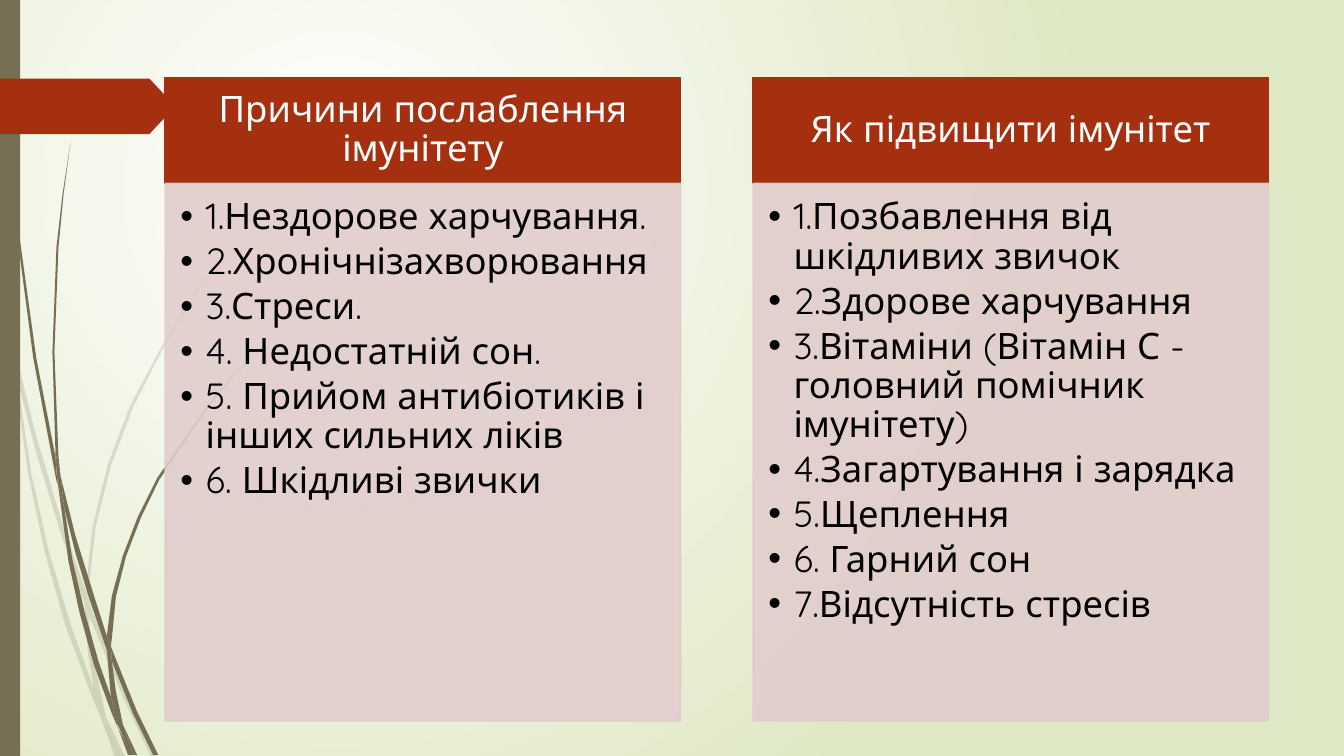
import pptx
import pptx.util
import pptx.dml.color
from pptx.enum.shapes import MSO_SHAPE
from pptx.enum.text import MSO_ANCHOR, PP_ALIGN
from pptx.oxml.ns import qn
from pptx.oxml.xmlchemy import OxmlElement
from pptx.util import Inches

COLORS = {
    "olive": "766F54", "rust": "A53010", "pink": "E1CDCC",
    "white": "FFFFFF", "black": "000000", "lime": "DFE8C4",
}
FONT = "Quicksand"
SIZE = 26
PANEL_W, HEAD_H, BODY_H = 5.11, 1.05, 5.33
PANEL_TOP = 0.77

# Outlines of the grass segments, as (x, y) in inches.
PALE_GRASS = [
    [(0.11, 3.5), (0.09, 3.22), (0, 2.82), (0, 2.99), (0.1, 3.44)],
    [(0.58, 5.22), (0.84, 5.99), (0.85, 5.86), (0.62, 5.2), (0.36, 4.33),
     (0.14, 3.45), (0.17, 3.76), (0.36, 4.5)],
    [(0.92, 6.07), (0.88, 5.96), (0.88, 6.1), (1.23, 6.94), (1.5, 7.51),
     (1.55, 7.51), (1.27, 6.92)],
    [(1.19, 7.51), (1.24, 7.51), (1.05, 7.11)],
    [(0.93, 6.83), (0.7, 6.19), (0.48, 5.45), (0.31, 4.69), (0.17, 3.76),
     (0.11, 3.5), (0.28, 4.7), (0.44, 5.46), (0.65, 6.21), (0.92, 6.93),
     (1.01, 7.14), (0.99, 7.07)],
    [(0.84, 5.99), (0.87, 6.46), (0.93, 6.83), (0.96, 6.92), (1.05, 7.11),
     (0.91, 6.46), (0.88, 6.1)],
    [(0.88, 5.84), (0.95, 5.22), (1.1, 4.62), (1.32, 4.04), (1.6, 3.49),
     (1.92, 2.95), (2.29, 2.45), (2.68, 1.98), (3.12, 1.54), (3.12, 1.53),
     (2.68, 1.97), (2.28, 2.44), (1.9, 2.94), (1.58, 3.48), (1.29, 4.03),
     (1.07, 4.61), (0.92, 5.22), (0.85, 5.84), (0.88, 5.96)],
    [(1.01, 7.14), (1.14, 7.51), (1.19, 7.51)],
    [(0.88, 6.08), (0.88, 5.96), (0.85, 5.86), (0.84, 5.99)],
    [(0.96, 6.92), (0.93, 6.83), (0.99, 7.07), (1.01, 7.14), (1.19, 7.51),
     (1.05, 7.11)],
]
DARK_GRASS = [
    [(0.07, 1.1), (0.17, 2.33), (0.33, 3.55), (0.56, 4.77), (0.57, 4.81),
     (0.55, 4.53), (0.36, 3.55), (0.19, 2.32), (0.08, 1.09), (0.05, 0.48),
     (0.04, 0), (0.03, 0), (0.04, 0.48)],
    [(0.88, 5.92), (1.06, 6.45), (1.06, 6.31), (0.93, 5.9), (0.75, 5.32),
     (0.6, 4.72), (0.64, 5.05), (0.75, 5.49)],
    [(1.13, 6.49), (1.1, 6.41), (1.11, 6.56), (1.32, 7.08), (1.52, 7.49),
     (1.57, 7.49), (1.36, 7.06)],
    [(1.1, 6.91), (0.98, 6.57), (0.84, 6.07), (0.72, 5.56), (0.64, 5.05),
     (0.57, 4.77), (0.68, 5.57), (0.79, 6.08), (0.93, 6.59), (1.11, 7.08),
     (1.17, 7.22), (1.16, 7.17)],
    [(0.6, 4.72), (0.58, 4.53), (0.54, 3.49), (0.58, 2.45), (0.63, 1.93),
     (0.7, 1.41), (0.62, 1.93), (0.56, 2.45), (0.52, 3.49), (0.55, 4.49)],
    [(1.33, 7.49), (1.36, 7.49), (1.22, 7.19)],
    [(0.57, 4.77), (0.64, 5.05), (0.6, 4.72), (0.55, 4.49), (0.55, 4.53)],
    [(1.11, 6.33), (1.15, 5.92), (1.25, 5.52), (1.4, 5.13), (1.58, 4.76),
     (2.05, 4.06), (2.31, 3.74), (2.61, 3.44), (2.6, 3.44), (2.31, 3.73),
     (2.04, 4.05), (1.56, 4.74), (1.37, 5.12), (1.22, 5.51), (1.11, 5.91),
     (1.06, 6.31), (1.1, 6.41)],
    [(1.17, 7.22), (1.27, 7.49), (1.31, 7.49)],
    [(1.06, 6.45), (1.1, 6.91), (1.16, 7.06), (1.22, 7.19), (1.15, 6.86),
     (1.11, 6.56)],
    [(1.06, 6.45), (1.11, 6.56), (1.1, 6.41), (1.06, 6.31)],
    [(1.16, 7.06), (1.1, 6.91), (1.16, 7.17), (1.3, 7.49), (1.33, 7.49),
     (1.22, 7.19)],
]

PANELS = [
    (1.64, "Причини послаблення імунітету", [
        "1.Нездорове харчування.",
        "2.Хронічнізахворювання",
        "3.Стреси.",
        "4. Недостатній сон.",
        "5. Прийом антибіотиків і інших сильних ліків",
        "6. Шкідливі звички",
    ]),
    (7.47, "Як підвищити імунітет", [
        "1.Позбавлення від шкідливих звичок",
        "2.Здорове харчування",
        "3.Вітаміни (Вітамін С - головний помічник імунітету)",
        "4.Загартування і зарядка",
        "5.Щеплення",
        "6. Гарний сон",
        "7.Відсутність стресів",
    ]),
]


def rgb(name):
    return pptx.dml.color.RGBColor.from_string(COLORS[name])


def paint(fill, color, opacity=100):
    fill.solid()
    fill.fore_color.rgb = rgb(color)
    if opacity < 100:
        alpha = OxmlElement("a:alpha")
        alpha.set("val", str(opacity * 1000))
        fill._xPr.find(".//" + qn("a:srgbClr")).append(alpha)


def set_background(s):
    """Radial gradient, white spreading out to lime."""
    fill = s.background.fill
    fill.gradient()
    for stop, color, position in zip(fill.gradient_stops, ("white", "lime"), (0, 1)):
        stop.color.rgb = rgb(color)
        stop.position = position
    lin = s.element.find(".//" + qn("a:lin"))
    radial = OxmlElement("a:path")
    radial.set("path", "circle")
    focus = OxmlElement("a:fillToRect")
    for side, value in zip("ltrb", (50000, 50000, 100000, 100000)):
        focus.set(side, str(value))
    radial.append(focus)
    lin.getparent().replace(lin, radial)


def add_grass(s, outline, opacity):
    points = [(Inches(x), Inches(y)) for x, y in outline]
    builder = s.shapes.build_freeform(*points[0])
    builder.add_line_segments(points[1:], close=True)
    sp = builder.convert_to_shape()
    sp.shadow.inherit = False
    sp.line.fill.background()
    paint(sp.fill, "olive", opacity)


def add_block(s, kind, x, y, w, h, color, opacity=100, outlined=False):
    sp = s.shapes.add_shape(kind, Inches(x), Inches(y), Inches(w), Inches(h))
    sp.shadow.inherit = False
    paint(sp.fill, color, opacity)
    if outlined:
        sp.line.width = pptx.util.Pt(1.25)
        paint(sp.line.fill, color, opacity)
    else:
        sp.line.fill.background()
    return sp


def set_margins(tf, *margins):
    (tf.margin_left, tf.margin_top,
     tf.margin_right, tf.margin_bottom) = map(Inches, margins)


def format_paragraph(p, color, align):
    p.alignment = align
    p.line_spacing = 0.9
    p.font.name = FONT
    p.font.size = pptx.util.Pt(SIZE)
    p.font.color.rgb = rgb(color)


def add_bullet(p):
    pPr = p._p.get_or_add_pPr()
    pPr.set("marL", str(Inches(0.25)))
    pPr.set("indent", str(-Inches(0.25)))
    for tag, key, value in (("a:buFont", "typeface", "Arial"), ("a:buChar", "char", "•")):
        element = OxmlElement(tag)
        element.set(key, value)
        pPr.find(qn("a:defRPr")).addprevious(element)


def add_panel(s, x, heading, items):
    head = add_block(s, MSO_SHAPE.RECTANGLE, x, PANEL_TOP, PANEL_W, HEAD_H,
                     "rust", outlined=True)
    tf = head.text_frame
    tf.vertical_anchor = MSO_ANCHOR.MIDDLE
    set_margins(tf, 0.2, 0.12, 0.2, 0.12)
    tf.text = heading
    format_paragraph(tf.paragraphs[0], "white", PP_ALIGN.CENTER)

    body = add_block(s, MSO_SHAPE.RECTANGLE, x, PANEL_TOP + HEAD_H, PANEL_W,
                     BODY_H, "pink", 90, outlined=True)
    tf = body.text_frame
    tf.vertical_anchor = MSO_ANCHOR.TOP
    set_margins(tf, 0.15, 0.15, 0.2, 0.23)
    tf.text = "\n".join(items)
    for p in tf.paragraphs:
        format_paragraph(p, "black", PP_ALIGN.LEFT)
        p.space_after = pptx.util.Pt(4)
        add_bullet(p)


def main():
    prs = pptx.Presentation()
    prs.slide_width, prs.slide_height = Inches(13.33), Inches(7.5)
    s = prs.slides.add_slide(prs.slide_layouts[6])
    set_background(s)
    for grass, opacity in ((PALE_GRASS, 20), (DARK_GRASS, 100)):
        for outline in grass:
            add_grass(s, outline, opacity)
    add_block(s, MSO_SHAPE.RECTANGLE, 0, 0, 0.2, 7.5, "olive")
    tab = add_block(s, MSO_SHAPE.PENTAGON, 0, 0.78, 1.74, 0.55, "rust")
    tab.adjustments[0] = 0.47
    for x, heading, items in PANELS:
        add_panel(s, x, heading, items)
    prs.save("out.pptx")


if __name__ == "__main__":
    main()
